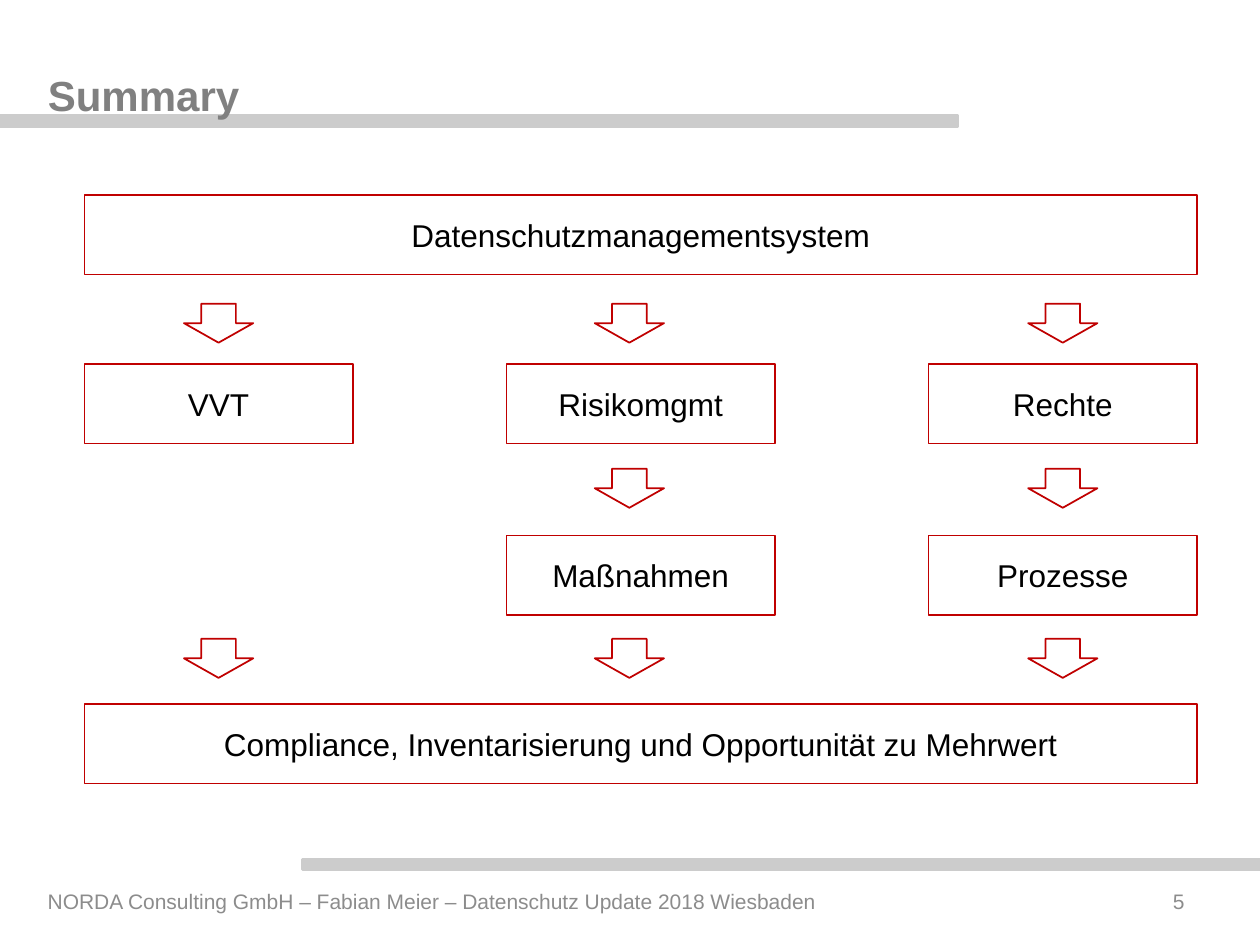
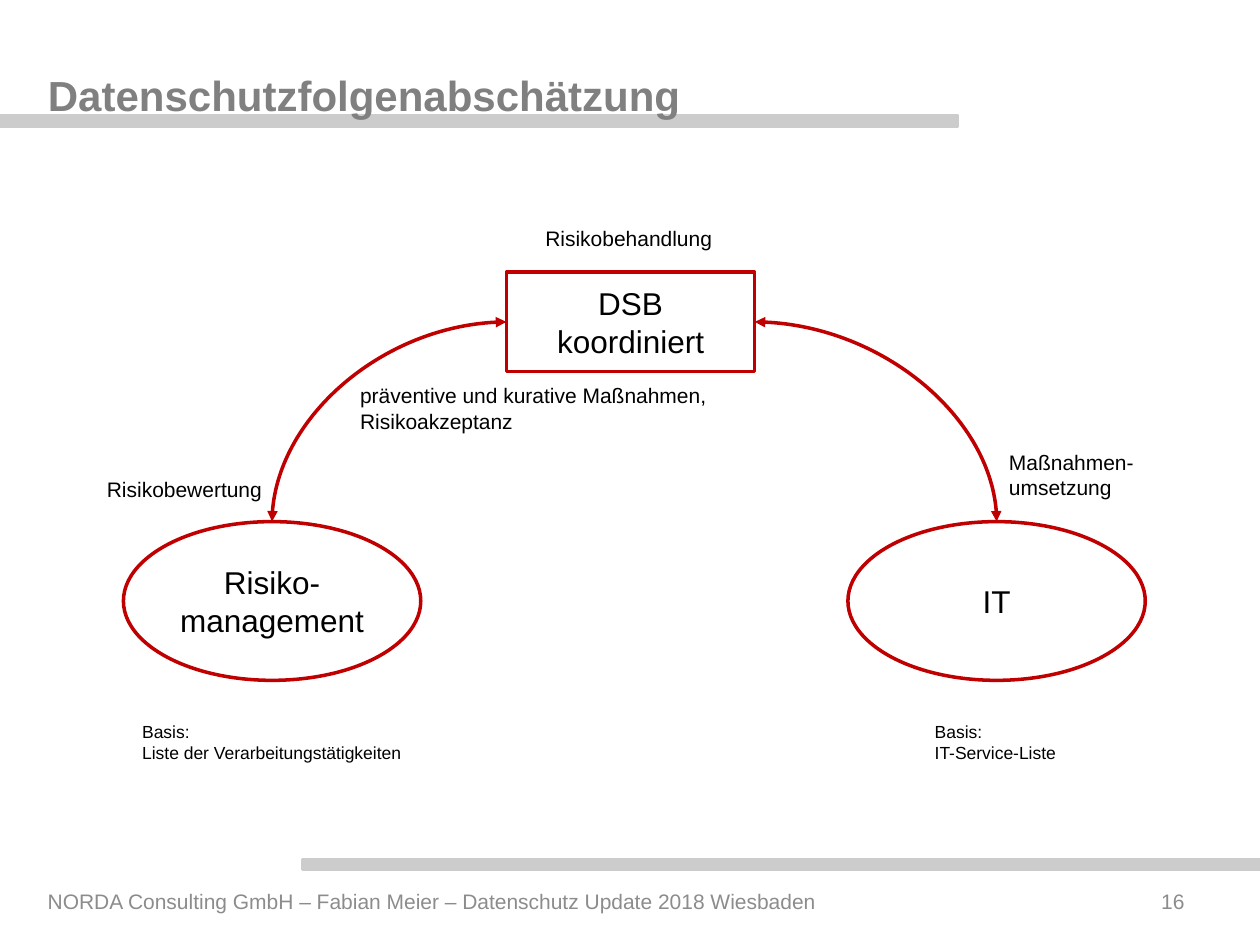
from dataclasses import dataclass

from lxml.etree import SubElement
from pptx import Presentation
from pptx.dml.color import RGBColor as RGB
from pptx.enum.shapes import MSO_CONNECTOR as CONN, MSO_SHAPE as SHAPE
from pptx.enum.text import MSO_ANCHOR as ANCHOR, MSO_AUTO_SIZE as AUTO, PP_ALIGN as ALIGN
from pptx.oxml.ns import qn
from pptx.util import Inches, Pt


@dataclass(frozen=True)
class Theme:
    font: str = "Arial"
    band: str = "CCCCCC"
    title: str = "808080"
    footer: str = "8C8C8C"
    accent: str = "C00000"
    ink: str = "000000"
    title_size: int = 24
    body_size: int = 18
    label_size: int = 12
    note_size: int = 10


THEME = Theme()
COLS = 100  # grid cells across the slide; cells are square
FOOTER = "NORDA Consulting GmbH – Fabian Meier – Datenschutz Update 2018 Wiesbaden"


def write(sp, text, size=THEME.body_size, color=THEME.ink, bold=False,
          align=ALIGN.LEFT, anchor=ANCHOR.MIDDLE, wrap=True):
    tf = sp.text_frame
    tf.word_wrap = wrap
    tf.vertical_anchor = anchor
    for i, line in enumerate(text.split("\n")):
        p = tf.paragraphs[0] if i == 0 else tf.add_paragraph()
        p.alignment = align
        r = p.add_run()
        r.text = line
        r.font.name, r.font.size, r.font.bold = THEME.font, Pt(size), bold
        r.font.color.rgb = RGB.from_string(color)


class Deck:
    def __init__(self):
        self.prs = Presentation()
        self.prs.slide_width, self.prs.slide_height = Inches(10), Inches(7.5)
        self.cell = self.prs.slide_width / COLS
        self.layout = self.prs.slide_layouts[5]
        self.slide = None

    def grid(self, *cells):
        return [round(c * self.cell) for c in cells]

    def new_slide(self, title, number):
        self.slide = self.prs.slides.add_slide(self.layout)
        if number == FIRST_NUMBER:
            self.bands()
        sp = self.slide.shapes.title
        sp.left, sp.top, sp.width, sp.height = self.grid(2.8, 2.1, 73.2, 7.9)
        write(sp, title, size=THEME.title_size, color=THEME.title, bold=True,
              anchor=ANCHOR.BOTTOM)
        small = dict(size=THEME.label_size, color=THEME.footer)
        self.text(71.7, 69.5, 23.3, 4, str(number), align=ALIGN.RIGHT, **small)
        self.text(2.8, 69.5, 63.1, 4, FOOTER, **small)

    def bands(self):
        """Place both bands on the layout, so that every slide shows them."""
        for x, y in ((0, 9.2), (24, 68.2)):
            sp = self.shape(SHAPE.RECTANGLE, x, y, 76, 0.8, line=THEME.band,
                            weight=2, fill=THEME.band)
            self.layout.shapes._spTree.append(sp._element)

    def shape(self, kind, x, y, w, h, text="", line=THEME.accent, weight=1, fill=None):
        sp = self.slide.shapes.add_shape(kind, *self.grid(x, y, w, h))
        sp.shadow.inherit = False
        if fill:
            sp.fill.solid()
            sp.fill.fore_color.rgb = RGB.from_string(fill)
        else:
            sp.fill.background()
        sp.line.color.rgb = RGB.from_string(line)
        sp.line.width = Pt(weight)
        if text:
            write(sp, text, align=ALIGN.CENTER)
        return sp

    def text(self, x, y, w, h, text, **fmt):
        sp = self.slide.shapes.add_textbox(*self.grid(x, y, w, h))
        write(sp, text, **fmt)
        return sp

    def label(self, x, y, w, h, text, size=THEME.label_size):
        sp = self.text(x, y, w, h, text, size=size, anchor=ANCHOR.TOP, wrap=False)
        sp.text_frame.auto_size = AUTO.SHAPE_TO_FIT_TEXT

    def curve(self, start, start_side, end, end_side):
        """Quarter curve with an arrowhead at both ends."""
        c = self.slide.shapes.add_connector(CONN.CURVE, 0, 0, 0, 0)
        c.begin_connect(start, start_side)
        c.end_connect(end, end_side)
        c.line.color.rgb = RGB.from_string(THEME.accent)
        c.line.width = Pt(2)
        props = c._element.spPr
        props.find(qn("a:prstGeom")).set("prst", "curvedConnector2")
        for tag in ("a:headEnd", "a:tailEnd"):
            SubElement(props.find(qn("a:ln")), qn(tag), type="triangle")
        SubElement(props, qn("a:effectLst"))


FIRST_NUMBER = 5


def summary(deck):
    deck.new_slide("Summary", FIRST_NUMBER)
    left, full, box_w, box_h = 6.7, 88.3, 21.3, 6.3
    pitch = (full - box_w) / 2

    # Full-width boxes
    for y, text in ((15.5, "Datenschutzmanagementsystem"),
                    (55.9, "Compliance, Inventarisierung und Opportunität zu Mehrwert")):
        deck.shape(SHAPE.RECTANGLE, left, y, full, box_h, text)

    # Boxes in three columns
    for y, names in ((28.9, ("VVT", "Risikomgmt", "Rechte")),
                     (42.5, (None, "Maßnahmen", "Prozesse"))):
        for col, name in enumerate(names):
            if name:
                deck.shape(SHAPE.RECTANGLE, left + col * pitch, y, box_w, box_h, name)

    # Arrows between the rows
    arrow_x = (14.6, 47.2, 81.6)
    for y, xs in ((24.1, arrow_x), (37.2, arrow_x[1:]), (50.7, arrow_x)):
        for x in xs:
            deck.shape(SHAPE.DOWN_ARROW, x, y, 5.5, 3.1)


def impact_assessment(deck):
    deck.new_slide("Datenschutzfolgenabschätzung", 16)

    # Roles
    dsb = deck.shape(SHAPE.RECTANGLE, 40.2, 21.6, 19.7, 7.9, "DSB\nkoordiniert", weight=2)
    risk, it = (deck.shape(SHAPE.OVAL, x, 41.4, 23.6, 12.6, name, weight=2)
                for x, name in ((9.8, "Risiko-management"), (67.3, "IT")))
    deck.curve(dsb, 1, risk, 0)
    deck.curve(dsb, 3, it, 0)

    # Tasks
    deck.label(7.5, 37.3, 14.4, 3, "Risikobewertung")
    deck.label(79.1, 35.2, 12, 5, "Maßnahmen-\numsetzung")
    deck.label(27.6, 29.9, 29.7, 5, "präventive und kurative Maßnahmen,\nRisikoakzeptanz")
    deck.label(42.3, 17.4, 15.3, 3, "Risikobehandlung")

    # Sources
    for x, w, source in ((10.3, 22.8, "Liste der Verarbeitungstätigkeiten"),
                         (73.2, 11.8, "IT-Service-Liste")):
        deck.label(x, 56.7, w, 4.4, f"Basis:\n{source}", size=THEME.note_size)


def main():
    deck = Deck()
    summary(deck)
    impact_assessment(deck)
    deck.prs.save("out.pptx")


if __name__ == "__main__":
    main()
